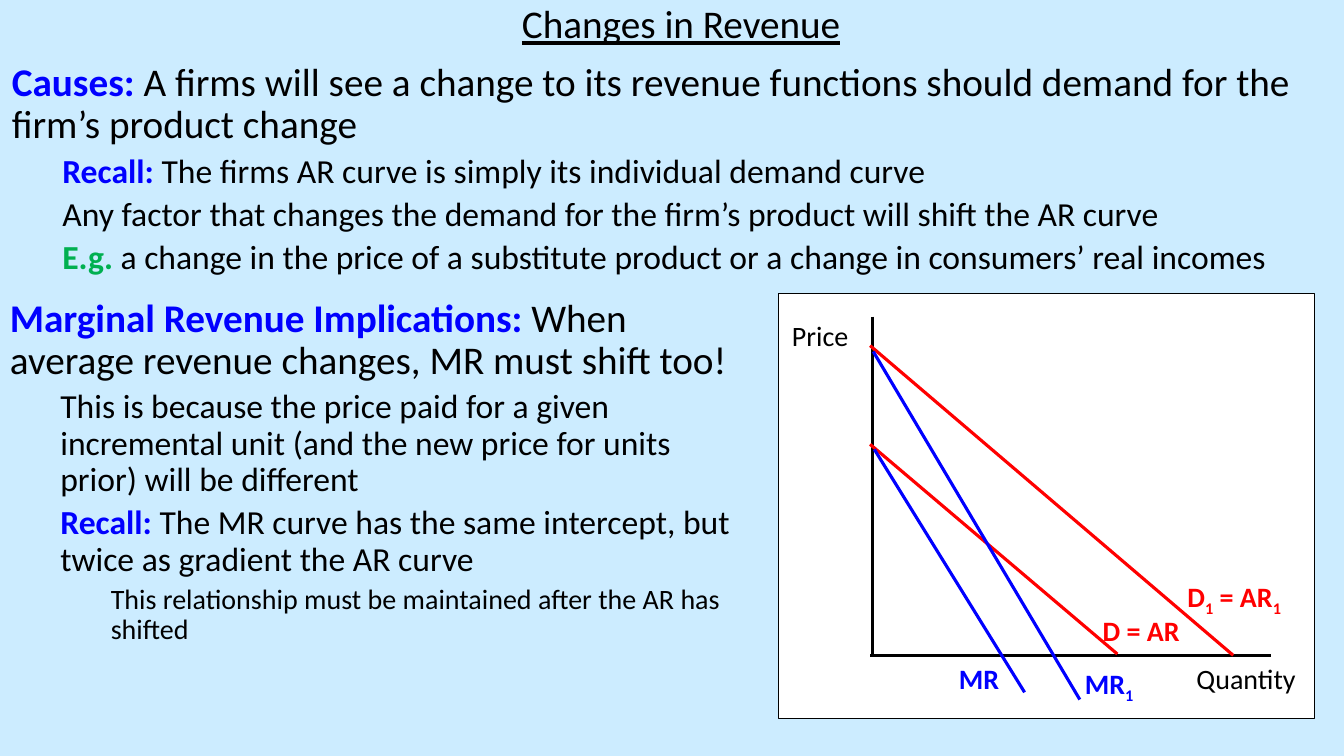
from pptx import Presentation, util as u
from pptx.dml import color
from pptx.enum import shapes, text
from pptx.oxml import ns
from lxml import etree

WIDE, HIGH = 13.33, 7.5
BLACK, WHITE, RED, BLUE, GREEN, SKY = (
    "000000", "FFFFFF", "FF0000", "0000FF", "00B050", "CCECFF")
SIZES = (28, 24, 20)

CAUSES = [
    (0, [("Causes: ", BLUE), ("A firms will see a change to its revenue functions "
         "should demand for the firm’s product change", BLACK)]),
    (1, [("Recall: ", BLUE),
         ("The firms AR curve is simply its individual demand curve", BLACK)]),
    (1, [("Any factor that changes the demand for the firm’s product "
          "will shift the AR curve", BLACK)]),
    (1, [("E.g. ", GREEN), ("a change in the price of a substitute product or "
         "a change in consumers’ real incomes", BLACK)]),
]
EFFECTS = [
    (0, [("Marginal Revenue Implications:", BLUE),
         (" When average revenue changes, MR must shift too!", BLACK)]),
    (1, [("This is because the price paid for a given incremental unit "
          "(and the new price for units prior) will be different", BLACK)]),
    (1, [("Recall: ", BLUE), ("The MR curve has the same intercept, but twice "
         "as gradient the AR curve", BLACK)]),
    (2, [("This relationship must be maintained after the AR has shifted", BLACK)]),
]
LINES = [
    (17.5, 5.5, 17.5, 85.1, BLACK),
    (17.1, 85.1, 91.9, 85.1, BLACK),
    (17.1, 35.5, 63.2, 84.8, RED),
    (17.9, 36.7, 45.9, 93.8, BLUE),
    (17.1, 12.3, 84.8, 85.1, RED),
    (17.7, 13.7, 56.2, 95.5, BLUE),
]
LABELS = [
    (-3, 4.7, 21.6, BLACK, ["Price"]),
    (71.2, 85.3, 32, BLACK, ["Quantity"]),
    (58.6, 74.2, 19.2, RED, ["D = AR"]),
    (31.8, 85.3, 19.4, BLUE, ["MR"]),
    (74.4, 66.1, 26.1, RED, ["D", "1", " = AR", "1"]),
    (55.3, 86.5, 19.4, BLUE, ["MR", "1"]),
]


def rgb(code):
    return color.RGBColor.from_string(code)


def style(item, form):
    for name, value in form.items():
        setattr(item, name, value)


def paint(fill, code):
    fill.solid()
    fill.fore_color.rgb = rgb(code)


def write(para, words, code, size, **form):
    run = para.add_run()
    run.text = words
    style(run.font, {"name": "Calibri", "size": u.Pt(size), **form})
    run.font.color.rgb = rgb(code)
    return run


def place(shape, box):
    names = ("left", "top", "width", "height")
    style(shape, dict(zip(names, map(u.Inches, box))))


def frame(slide, box):
    shape = slide.shapes.add_textbox(*map(u.Inches, box))
    shape.text_frame.word_wrap = True
    return shape.text_frame


def head(slide, box):
    title = slide.shapes.title
    place(title, box)
    style(title.text_frame, {"vertical_anchor": text.MSO_ANCHOR.TOP,
                             "auto_size": text.MSO_AUTO_SIZE.NONE})
    para = title.text_frame.paragraphs[0]
    style(para, {"alignment": text.PP_ALIGN.CENTER, "line_spacing": 0.9})
    write(para, "Changes in Revenue", BLACK, SIZES[0], underline=True)


def notes(slide, box, rows):
    body = frame(slide, box)
    for num, (level, runs) in enumerate(rows):
        para = body.add_paragraph() if num else body.paragraphs[0]
        style(para, {"level": level, "line_spacing": 0.9,
                     "space_before": u.Pt(5 if level else 10)})
        props = para._p.get_or_add_pPr()
        props.set("marL", str(u.Inches(level / 2)))
        props.set("indent", "0")
        for words, code in runs:
            write(para, words, code, SIZES[level], bold=code != BLACK)


def graph(slide, box):
    left, top, width, height = box
    col, row = width / 100, height / 100

    def spot(x, y):
        return left + x * col, top + y * row

    panel = slide.shapes.add_shape(
        shapes.MSO_SHAPE.RECTANGLE, *map(u.Inches, box))
    panel.shadow.inherit = False
    paint(panel.fill, WHITE)
    paint(panel.line.fill, BLACK)
    panel.line.width = u.Pt(1)

    for x1, y1, x2, y2, code in LINES:
        ends = map(u.Inches, spot(x1, y1) + spot(x2, y2))
        line = slide.shapes.add_connector(shapes.MSO_CONNECTOR.STRAIGHT, *ends)
        line.line.width = u.Pt(2.25)
        paint(line.line.fill, code)
        etree.SubElement(line._element.spPr, ns.qn("a:effectLst"))

    for x, y, span, code, parts in LABELS:
        para = frame(slide, (*spot(x, y), span * col, 10.6 * row)).paragraphs[0]
        if code == BLACK:
            para.alignment = text.PP_ALIGN.CENTER
        for part in parts:
            run = write(para, part, code, 20, bold=code != BLACK)
            if part == "1":
                run._r.get_or_add_rPr().set("baseline", "-25000")


def main():
    deck = Presentation()
    style(deck, {"slide_width": u.Inches(WIDE), "slide_height": u.Inches(HIGH)})
    slide = deck.slides.add_slide(deck.slide_layouts.get_by_name("Title Only"))
    paint(slide.background.fill, SKY)
    head(slide, (0.02, 0, 13.47, 0.55))
    notes(slide, (0.02, 0.57, 13.47, 2.3), CAUSES)
    notes(slide, (0, 2.91, 7.55, 4.59), EFFECTS)
    graph(slide, (7.72, 2.91, 5.32, 4.22))
    deck.save("out.pptx")


if __name__ == "__main__":
    main()
